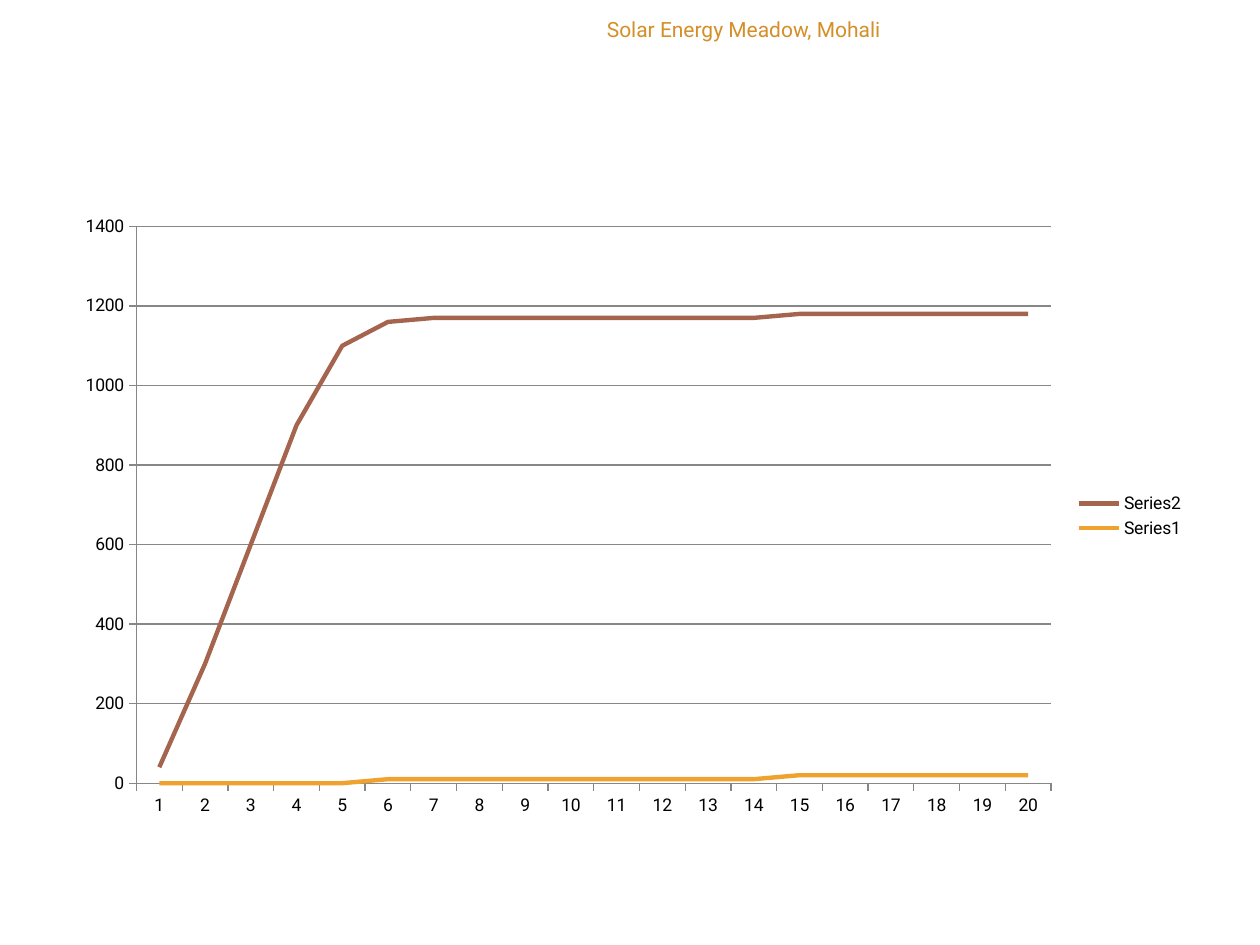
from pptx import Presentation
from pptx.chart.data import CategoryChartData
from pptx.dml.color import RGBColor
from pptx.enum.chart import XL_CHART_TYPE, XL_LEGEND_POSITION, XL_TICK_MARK
from pptx.enum.text import MSO_ANCHOR, MSO_AUTO_SIZE, PP_ALIGN
from pptx.util import Inches, Pt

LINE_STACKED = XL_CHART_TYPE.LINE_STACKED
LEGEND_RIGHT = XL_LEGEND_POSITION.RIGHT
TICK_OUTSIDE = XL_TICK_MARK.OUTSIDE
TICK_NONE = XL_TICK_MARK.NONE
ANCHOR_TOP = MSO_ANCHOR.TOP
AUTO_SIZE_NONE = MSO_AUTO_SIZE.NONE
ALIGN_RIGHT = PP_ALIGN.RIGHT

FONT_NAME = "Roboto"
BLACK = RGBColor(0x00, 0x00, 0x00)
GRAY = RGBColor(0x87, 0x87, 0x87)
GOLD = RGBColor(0xD4, 0x8F, 0x29)
ORANGE = RGBColor(0xF0, 0xA2, 0x2E)
BROWN = RGBColor(0xA5, 0x64, 0x4E)

CATEGORIES = [str(number) for number in range(1, 21)]
SERIES = [
    ("Series1", [0] * 5 + [10] * 9 + [20] * 6, ORANGE),
    ("Series2", [40, 300, 600, 900, 1100, 1150] + [1160] * 14, BROWN),
]


def style_font(font, size, color):
    """Set the family, size and colour of a font."""
    font.name = FONT_NAME
    font.size = Pt(size)
    font.color.rgb = color


def style_line(line, color, width):
    """Set the colour and width of a line."""
    line.color.rgb = color
    line.width = Pt(width)


def set_title(slide, text):
    """Place and format the slide title."""
    title = slide.shapes.title
    title.left, title.top = Inches(3.42), Inches(0.08)
    title.width, title.height = Inches(3.67), Inches(0.32)
    frame = title.text_frame
    frame.text = text
    frame.word_wrap = True
    frame.auto_size = AUTO_SIZE_NONE
    frame.vertical_anchor = ANCHOR_TOP
    paragraph = frame.paragraphs[0]
    paragraph.alignment = ALIGN_RIGHT
    style_font(paragraph.font, 12, GOLD)


def add_line_chart(slide):
    """Add the stacked line chart with its axes and legend."""
    data = CategoryChartData()
    data.categories = CATEGORIES
    for name, values, _ in SERIES:
        data.add_series(name, values)
    chart = slide.shapes.add_chart(
        LINE_STACKED, Inches(0.5), Inches(1.62), Inches(9), Inches(4.95), data
    ).chart
    chart.has_title = False
    style_font(chart.font, 10, BLACK)
    chart.has_legend = True
    chart.legend.position = LEGEND_RIGHT
    chart.legend.include_in_layout = False
    for axis in (chart.category_axis, chart.value_axis):
        axis.major_tick_mark = TICK_OUTSIDE
        axis.minor_tick_mark = TICK_NONE
        style_line(axis.format.line, GRAY, 0.75)
    chart.value_axis.has_major_gridlines = True
    style_line(chart.value_axis.major_gridlines.format.line, GRAY, 0.75)
    plot = chart.plots[0]
    plot.vary_by_categories = False
    for series, (_, _, color) in zip(plot.series, SERIES):
        series.smooth = False
        style_line(series.format.line, color, 2.5)


def main():
    """Build the slide and save the presentation."""
    presentation = Presentation()
    presentation.slide_width = Inches(10)
    presentation.slide_height = Inches(7.5)
    slide = presentation.slides.add_slide(presentation.slide_layouts[5])
    add_line_chart(slide)
    set_title(slide, "Solar Energy Meadow, Mohali")
    presentation.save("out.pptx")


if __name__ == "__main__":
    main()
